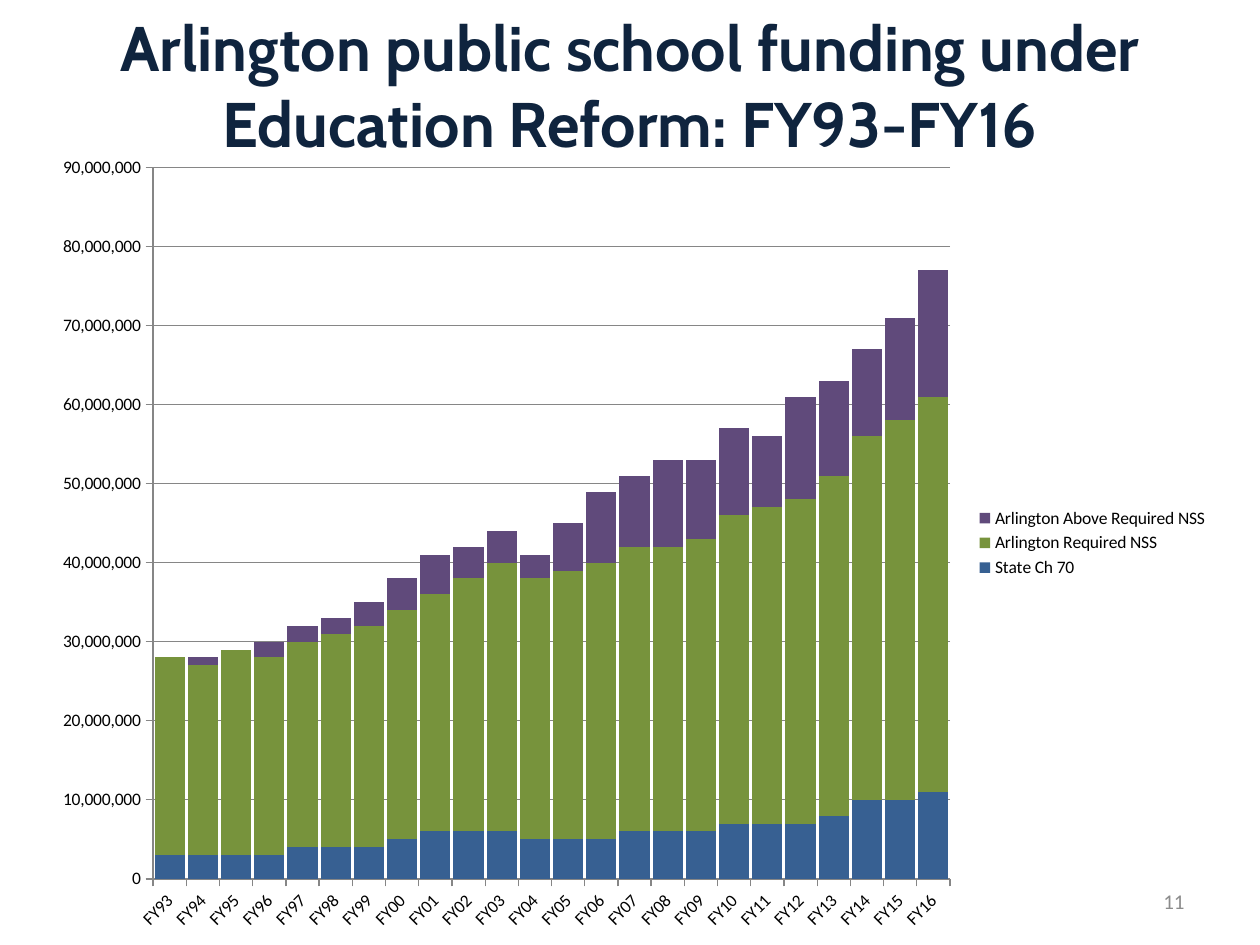
from lxml import etree
from pptx import Presentation
from pptx.chart.data import CategoryChartData
from pptx.dml.color import RGBColor
from pptx.enum.chart import XL_CHART_TYPE, XL_LEGEND_POSITION, XL_TICK_MARK
from pptx.enum.text import MSO_ANCHOR, PP_ALIGN
from pptx.oxml.ns import qn
from pptx.util import Pt

STACKED = XL_CHART_TYPE.COLUMN_STACKED
RIGHT = XL_LEGEND_POSITION.RIGHT
OUT, NONE = XL_TICK_MARK.OUTSIDE, XL_TICK_MARK.NONE
MIDDLE = MSO_ANCHOR.MIDDLE

TITLE = "Arlington public school funding under Education Reform: FY93-FY16"
PAGE = "11"
YEARS = [f"FY{year % 100:02d}" for year in range(1993, 2017)]
MILLION = 1_000_000
FUNDS = [
    ("State Ch 70", "376092",
     [3, 3, 3, 3, 4, 4, 4, 5, 6, 6, 6, 5,
      5, 5, 6, 6, 6, 7, 7, 7, 8, 10, 10, 11]),
    ("Arlington Required NSS", "77933C",
     [25, 24, 26, 25, 26, 27, 28, 29, 30, 32, 34, 33,
      34, 35, 36, 36, 37, 39, 40, 41, 43, 46, 48, 50]),
    ("Arlington Above Required NSS", "604A7B",
     [0, 1, 0, 2, 2, 2, 3, 4, 5, 4, 4, 3,
      6, 9, 9, 11, 10, 11, 9, 13, 12, 11, 13, 16]),
]
LEFT, TOP, WIDE, HIGH = 22.7, 80.5, 675, 459.5
PLOT = {"x": 64.8 / WIDE, "y": 15.2 / HIGH,
        "w": 455.4 / WIDE, "h": 406.6 / HIGH}


def color(code):
    return RGBColor.from_string(code)


def style(font, name, size, code, bold=False):
    font.name, font.size, font.bold = name, Pt(size), bold
    font.color.rgb = color(code)


def write(shape, text, align, *look):
    frame = shape.text_frame
    frame.word_wrap = True
    frame.vertical_anchor = MIDDLE
    frame.text = text
    para = frame.paragraphs[0]
    para.alignment = align
    style(para.font, *look)


def place(plot):
    for old in plot.findall(qn("c:layout")):
        plot.remove(old)
    layout = etree.Element(qn("c:layout"))
    manual = etree.SubElement(layout, qn("c:manualLayout"))
    rules = [("layoutTarget", "inner"), ("xMode", "edge"), ("yMode", "edge")]
    for tag, value in rules + list(PLOT.items()):
        etree.SubElement(manual, qn(f"c:{tag}")).set("val", str(value))
    plot.insert(0, layout)


def draw(slide):
    data = CategoryChartData(number_format="#,##0")
    data.categories = YEARS
    for name, _, values in FUNDS:
        data.add_series(name, [value * MILLION for value in values])
    chart = slide.shapes.add_chart(
        STACKED, Pt(LEFT), Pt(TOP), Pt(WIDE), Pt(HIGH), data).chart
    chart.has_title = False
    style(chart.font, "Calibri", 10, "000000")
    chart.has_legend = True
    chart.legend.position = RIGHT
    chart.legend.include_in_layout = False

    bars = chart.plots[0]
    bars.gap_width, bars.overlap = 10, 100
    bars.vary_by_categories = False
    for series, (_, code, _) in zip(bars.series, FUNDS):
        series.format.fill.solid()
        series.format.fill.fore_color.rgb = color(code)

    years, money = chart.category_axis, chart.value_axis
    for axis in (years, money):
        axis.major_tick_mark, axis.minor_tick_mark = OUT, NONE
        style(axis.tick_labels.font, "Calibri", 10, "000000")
    money.minimum_scale, money.maximum_scale = 0, 90 * MILLION
    money.major_unit = 10 * MILLION
    money.has_major_gridlines = True
    money.tick_labels.number_format = "#,##0"
    money.tick_labels.number_format_is_linked = False
    for part in (years, money, money.major_gridlines):
        part.format.line.color.rgb = color("868686")

    root = chart._chartSpace
    turn = root.find(f".//{qn('c:catAx')}/{qn('c:txPr')}/{qn('a:bodyPr')}")
    turn.set("rot", "-2700000")
    turn.set("vert", "horz")
    place(root.find(f".//{qn('c:plotArea')}"))


def main():
    deck = Presentation()
    deck.slide_width, deck.slide_height = Pt(720), Pt(540)
    slide = deck.slides.add_slide(deck.slide_layouts[5])
    title = slide.shapes.title
    title.left, title.top, title.width, title.height = (
        Pt(36), Pt(3.25), Pt(648), Pt(90))
    write(title, TITLE, PP_ALIGN.CENTER, "Cabin", 36, "0F243E", True)
    draw(slide)
    page = slide.shapes.add_textbox(Pt(516), Pt(500.5), Pt(168), Pt(28.75))
    write(page, PAGE, PP_ALIGN.RIGHT, "Calibri", 12, "8C8C8C")
    deck.save("out.pptx")


if __name__ == "__main__":
    main()
